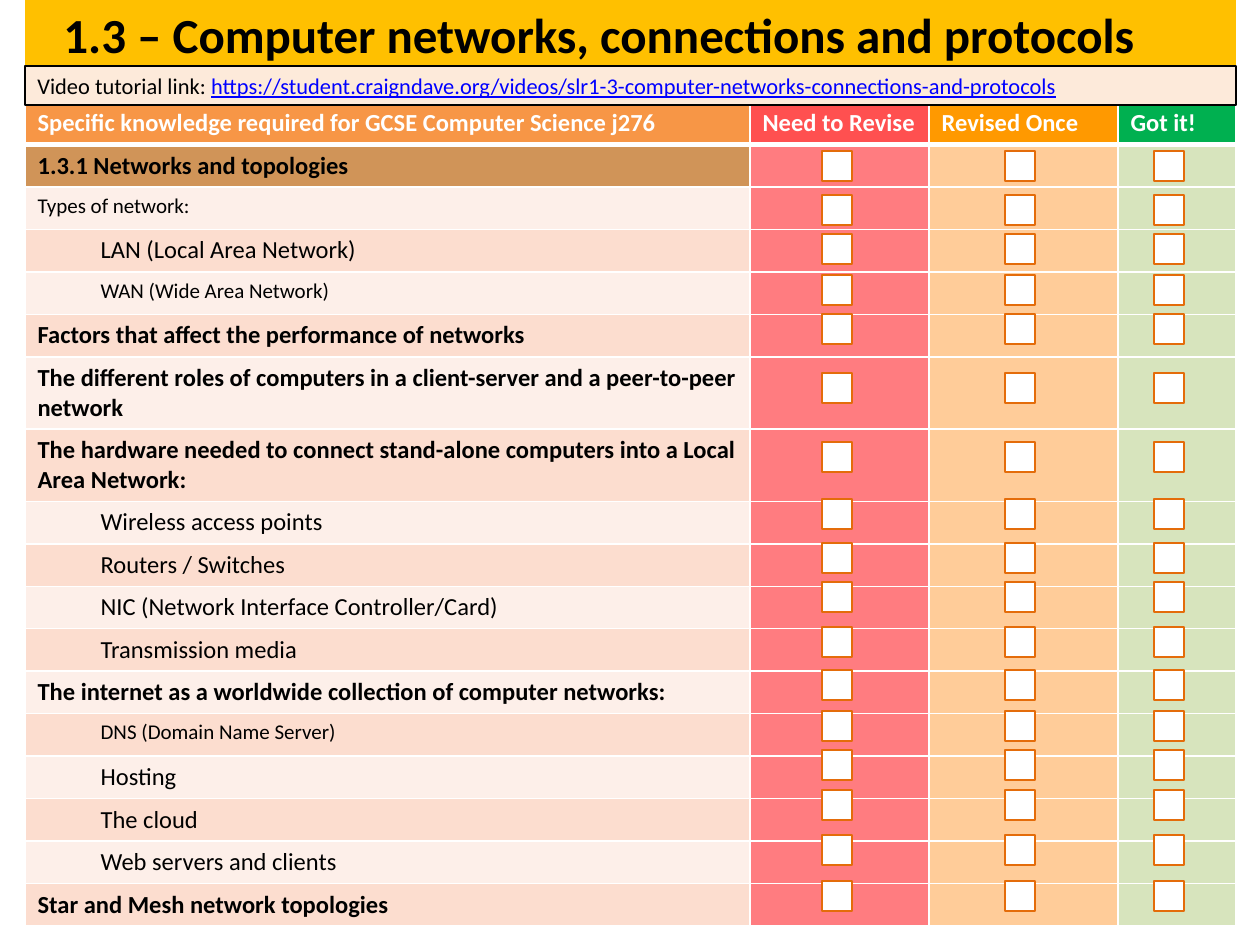
from lxml.etree import SubElement
from pptx import Presentation
from pptx.dml.color import RGBColor
from pptx.enum.shapes import MSO_SHAPE as Shape
from pptx.enum.text import MSO_ANCHOR as Anchor, MSO_AUTO_SIZE as AutoSize, PP_ALIGN as Align
from pptx.oxml.ns import qn
from pptx.util import Pt

EMU_PER_PX = 914400 / 126
FONT = "Calibri"
COLORS = {
    "title": "FFC000", "link_box": "FDEADA", "link": "0000FF",
    "black": "000000", "white": "FFFFFF", "checkbox": "E46C0A",
    "topic": "D09458", "light": "FDEFE9", "dark": "FCDDCF",
}
HEADERS = [
    ("Specific knowledge required for GCSE Computer Science j276", "F79646"),
    ("Need to Revise", "FF5050"),
    ("Revised Once", "FF9900"),
    ("Got it!", "00B050"),
]
STATUS_FILLS = ["FF7C80", "FFCC99", "D7E4BD"]
BOLD = {"bold": True}
ITEM = {"indent": 63}
SMALL_ITEM = {"indent": 63, "size": 12}
TOPICS = [
    ("1.3.1 Networks and topologies", BOLD),
    ("Types of network:", {"size": 12}),
    ("LAN (Local Area Network)", ITEM),
    ("WAN (Wide Area Network)", SMALL_ITEM),
    ("Factors that affect the performance of networks", BOLD),
    ("The different roles of computers in a client-server and a peer-to-peer network", BOLD),
    ("The hardware needed to connect stand-alone computers into a Local Area Network:", BOLD),
    ("Wireless access points", ITEM),
    ("Routers / Switches", ITEM),
    ("NIC (Network Interface Controller/Card)", ITEM),
    ("Transmission media", ITEM),
    ("The internet as a worldwide collection of computer networks:", BOLD),
    ("DNS (Domain Name Server)", SMALL_ITEM),
    ("Hosting", ITEM),
    ("The cloud", ITEM),
    ("Web servers and clients", ITEM),
    ("Star and Mesh network topologies", BOLD),
]
COLUMN_WIDTHS = [725, 179, 189, 118]
ROW_HEIGHT, TALL_ROW_HEIGHT = 42, 72
TALL_ROWS = {6, 7}
CHECKBOX_SIZE = 30
CHECKBOX_LEFTS = [797, 980, 1129]
CHECKBOX_TOPS = [49, 93, 132, 173, 212, 271, 340, 397, 441,
                 480, 525, 568, 609, 648, 688, 733, 779]


def px(value):
    return int(value * EMU_PER_PX)


def place(shape, box):
    shape.left, shape.top, shape.width, shape.height = map(px, box)


def paint(target, color):
    target.fill.solid()
    target.fill.fore_color.rgb = RGBColor.from_string(color)


def outline(shape, color):
    shape.line.color.rgb = RGBColor.from_string(color)
    shape.line.width = Pt(1.5)


def add_text(paragraph, text, size=14, color=COLORS["black"], bold=False,
             underline=False, indent=0):
    if indent:
        properties = paragraph._p.get_or_add_pPr()
        properties.set("marL", str(px(indent)))
        properties.set("indent", "0")
        paragraph.level = 1
    run = paragraph.add_run()
    run.text = text
    font = run.font
    font.name, font.size, font.bold = FONT, Pt(size), bold
    font.underline = underline
    font.color.rgb = RGBColor.from_string(color)


def format_cell(cell, fill, top=1, bottom=1):
    properties = cell._tc.get_or_add_tcPr()
    for side, width in (("L", 1), ("R", 1), ("T", top), ("B", bottom)):
        line = SubElement(properties, qn(f"a:ln{side}"), w=str(Pt(width)))
        solid = SubElement(line, qn("a:solidFill"))
        SubElement(solid, qn("a:srgbClr"), val=COLORS["white"])
    paint(cell, fill)


def build_title(slide, box):
    title = slide.shapes.title
    place(title, box)
    paint(title, COLORS["title"])
    frame = title.text_frame
    frame.auto_size = AutoSize.NONE
    frame.vertical_anchor = Anchor.MIDDLE
    paragraph = frame.paragraphs[0]
    paragraph.alignment = Align.CENTER
    add_text(paragraph, "1.3 – Computer networks, connections and protocols \t",
             size=28, bold=True)


def build_table(slide, box):
    frame = slide.shapes.add_table(len(TOPICS) + 1, len(HEADERS), *map(px, box))
    table = frame.table
    for column, width in zip(table.columns, COLUMN_WIDTHS):
        column.width = px(width)
    for index, row in enumerate(table.rows):
        row.height = px(TALL_ROW_HEIGHT if index in TALL_ROWS else ROW_HEIGHT)
    for column, (text, fill) in enumerate(HEADERS):
        cell = table.cell(0, column)
        format_cell(cell, fill, bottom=3)
        add_text(cell.text_frame.paragraphs[0], text, color=COLORS["white"], bold=True)
    for row, (text, style) in enumerate(TOPICS, 1):
        top = 3 if row == 1 else 1
        band = "topic" if row == 1 else "dark" if row % 2 else "light"
        cell = table.cell(row, 0)
        format_cell(cell, COLORS[band], top=top)
        add_text(cell.text_frame.paragraphs[0], text, **style)
        for column, fill in enumerate(STATUS_FILLS, 1):
            cell = table.cell(row, column)
            format_cell(cell, fill, top=top)
            paragraph = cell.text_frame.paragraphs[0]
            SubElement(paragraph._p, qn("a:endParaRPr"), sz="1400")


def build_checkboxes(slide, box):
    left, top = box[:2]
    for row_top in CHECKBOX_TOPS:
        for column_left in CHECKBOX_LEFTS:
            bounds = left + column_left, top + row_top, CHECKBOX_SIZE, CHECKBOX_SIZE
            checkbox = slide.shapes.add_shape(Shape.RECTANGLE, *map(px, bounds))
            checkbox.shadow.inherit = False
            paint(checkbox, COLORS["white"])
            outline(checkbox, COLORS["checkbox"])


def build_link_box(slide, box):
    link_box = slide.shapes.add_textbox(*map(px, box))
    paint(link_box, COLORS["link_box"])
    outline(link_box, COLORS["black"])
    frame = link_box.text_frame
    frame.word_wrap = True
    frame.vertical_anchor = Anchor.MIDDLE
    paragraph = frame.paragraphs[0]
    add_text(paragraph, "Video tutorial link: ", size=12.8)
    add_text(paragraph,
             "https://student.craigndave.org/videos/slr1-3-computer-networks-connections-and-protocols",
             size=12.8, color=COLORS["link"], underline=True)


def main():
    presentation = Presentation()
    presentation.slide_width, presentation.slide_height = px(1260), px(945)
    slide = presentation.slides.add_slide(presentation.slide_layouts[5])
    checklist = (25, 102, sum(COLUMN_WIDTHS), 816)
    build_title(slide, (25, 0, 1211, 68))
    build_table(slide, checklist)
    build_checkboxes(slide, checklist)
    build_link_box(slide, (25, 66, 1211, 39))
    presentation.save("out.pptx")


if __name__ == "__main__":
    main()
